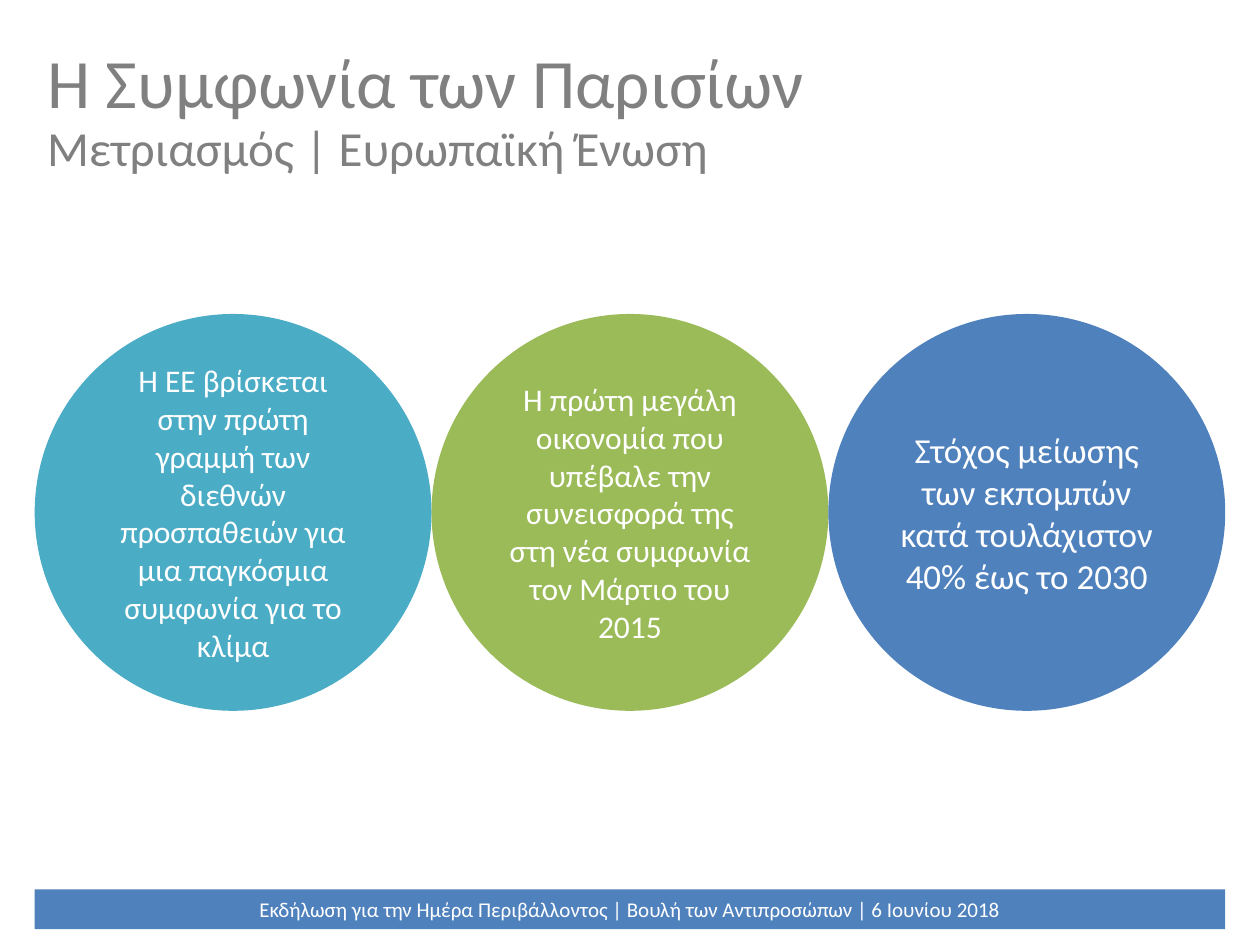
from pptx import Presentation
from pptx.dml.color import RGBColor
from pptx.enum.shapes import MSO_SHAPE
from pptx.enum.text import MSO_ANCHOR, PP_ALIGN
from pptx.util import Cm, Pt


def paint(part, color):
    part.solid()
    part.fore_color.rgb = RGBColor.from_string(color)


def write(shape, text, size, color, align, inset=0.25):
    frame = shape.text_frame
    frame.text = text
    frame.word_wrap = True
    frame.vertical_anchor = MSO_ANCHOR.MIDDLE
    frame.margin_left = frame.margin_right = Cm(inset)
    para = frame.paragraphs[0]
    para.alignment = align
    font = para.runs[0].font
    font.name = "Calibri"
    font.size = Pt(size)
    paint(font.fill, color)


deck = Presentation()
deck.slide_width = Cm(25.4)
deck.slide_height = Cm(19.05)
slide = deck.slides.add_slide(deck.slide_layouts[6])
left, width = 0.7, 24

heads = [
    ("Η Συμφωνία των Παρισίων", 0.76, 39.6),
    ("Μετριασμός | Ευρωπαϊκή Ένωση", 2.08, 28),
]
for text, top, size in heads:
    box = slide.shapes.add_textbox(Cm(left), Cm(top), Cm(width), Cm(1.75))
    write(box, text, size, "808080", PP_ALIGN.LEFT)

side = width / 3
discs = [
    ("Η ΕΕ βρίσκεται στην πρώτη γραμμή των διεθνών προσπαθειών "
     "για μια παγκόσμια συμφωνία για το κλίμα", "4BACC6", 18, 0.33),
    ("Η πρώτη μεγάλη οικονομία που υπέβαλε την συνεισφορά της "
     "στη νέα συμφωνία τον Μάρτιο του 2015", "9BBB59", 18, 0.33),
    ("Στόχος μείωσης των εκπομπών κατά τουλάχιστον 40% έως το 2030",
     "4F81BD", 20, 0.25),
]
forms = [
    (MSO_SHAPE.OVAL, left + i * side, 6.33, side, side, *disc)
    for i, disc in enumerate(discs)
]
forms.append((
    MSO_SHAPE.RECTANGLE, left, 17.93, width, 0.8,
    "Εκδήλωση για την Ημέρα Περιβάλλοντος | Βουλή των Αντιπροσώπων | 6 Ιουνίου 2018",
    "4F81BD", 12, 0.25,
))
for kind, x, y, wide, high, text, color, size, inset in forms:
    shape = slide.shapes.add_shape(kind, Cm(x), Cm(y), Cm(wide), Cm(high))
    shape.shadow.inherit = False
    paint(shape.fill, color)
    shape.line.fill.background()
    write(shape, text, size, "FFFFFF", PP_ALIGN.CENTER, inset)

deck.save("out.pptx")
